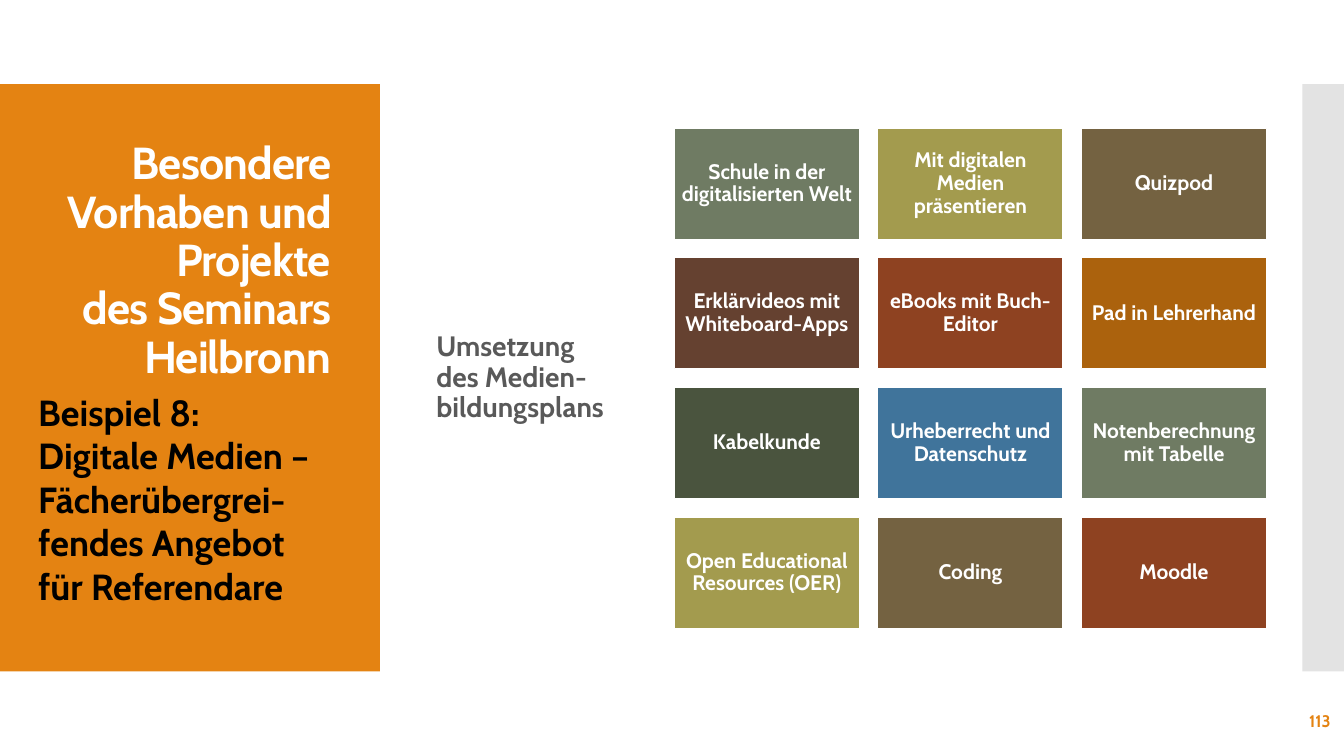
from dataclasses import dataclass

from pptx import Presentation
from pptx.dml.color import RGBColor
from pptx.enum.shapes import MSO_SHAPE
from pptx.enum.text import MSO_ANCHOR, PP_ALIGN
from pptx.shapes.autoshape import Shape
from pptx.slide import Slide
from pptx.util import Pt

RECTANGLE = MSO_SHAPE.RECTANGLE
TOP, MIDDLE, BOTTOM = MSO_ANCHOR.TOP, MSO_ANCHOR.MIDDLE, MSO_ANCHOR.BOTTOM
LEFT, CENTER, RIGHT = PP_ALIGN.LEFT, PP_ALIGN.CENTER, PP_ALIGN.RIGHT

FONT = "Cabin"
COLORS = {
    "white": "FFFFFF",
    "black": "000000",
    "gray": "595959",
    "light_gray": "E3E3E3",
    "orange": "E48312",
    "sage": "6F7B63",
    "olive": "A39B4E",
    "khaki": "746241",
    "brown": "654130",
    "rust": "8E4221",
    "amber": "AB620D",
    "forest": "4A543E",
    "blue": "40749B",
}

COLUMNS = 3
GRID_LEFT, GRID_TOP = 481.7, 91.6
TILE_WIDTH, TILE_HEIGHT = 132.2, 79.3
COLUMN_PITCH, ROW_PITCH = 145.4, 92.6
TILE_INSET = 4.3


@dataclass(frozen=True)
class Box:
    left: float
    top: float
    width: float
    height: float


@dataclass(frozen=True)
class TextStyle:
    size: float
    color: str
    align: PP_ALIGN
    anchor: MSO_ANCHOR
    line_spacing: float = 1.0
    tracking: int = 0


@dataclass(frozen=True)
class TextBlock:
    box: Box
    style: TextStyle
    paragraphs: tuple[tuple[str, ...], ...]


@dataclass(frozen=True)
class Topic:
    label: str
    color: str


PANELS = (
    (Box(0, 60, 271.4, 419.5), "orange"),
    (Box(930.2, 60, 29.8, 419.5), "light_gray"),
)

TEXT_BLOCKS = (
    TextBlock(
        Box(837.4, 500.4, 120.2, 28.8),
        TextStyle(12, "orange", RIGHT, MIDDLE),
        (("113",),),
    ),
    TextBlock(
        Box(20.2, 90, 223.2, 187.2),
        TextStyle(32, "white", RIGHT, BOTTOM, 0.9, -60),
        (("Besondere Vorhaben und Projekte",), ("des Seminars Heilbronn",)),
    ),
    TextBlock(
        Box(20.2, 275, 223.2, 182.9),
        TextStyle(25.9, "black", LEFT, TOP),
        (("Beispiel 8:",
          "Digitale Medien – Fächerübergrei-fendes Angebot für Referendare"),),
    ),
    TextBlock(
        Box(304.6, 68.4, 151.2, 403.2),
        TextStyle(20, "gray", LEFT, MIDDLE, 0.9),
        (("Umsetzung", "des Medien-bildungsplans"),),
    ),
)

TOPIC_STYLE = TextStyle(15, "white", CENTER, MIDDLE, 0.9)
TOPICS = (
    Topic("Schule in der digitalisierten Welt", "sage"),
    Topic("Mit digitalen Medien präsentieren", "olive"),
    Topic("Quizpod", "khaki"),
    Topic("Erklärvideos mit Whiteboard-Apps", "brown"),
    Topic("eBooks mit Buch-Editor", "rust"),
    Topic("Pad in Lehrerhand", "amber"),
    Topic("Kabelkunde", "forest"),
    Topic("Urheberrecht und Datenschutz", "blue"),
    Topic("Notenberechnung mit Tabelle", "sage"),
    Topic("Open Educational Resources (OER)", "olive"),
    Topic("Coding", "khaki"),
    Topic("Moodle", "rust"),
)


def rgb(color: str) -> RGBColor:
    return RGBColor.from_string(COLORS[color])


def write_text(
    shape: Shape, paragraphs: tuple[tuple[str, ...], ...], style: TextStyle
) -> None:
    frame = shape.text_frame
    frame.word_wrap = True
    frame.vertical_anchor = style.anchor
    for index, lines in enumerate(paragraphs):
        paragraph = frame.add_paragraph() if index else frame.paragraphs[0]
        paragraph.alignment = style.align
        paragraph.line_spacing = style.line_spacing
        for position, line in enumerate(lines):
            if position:
                paragraph.add_line_break()
            run = paragraph.add_run()
            run.text = line
            run.font.name = FONT
            run.font.size = Pt(style.size)
            run.font.bold = True
            run.font.color.rgb = rgb(style.color)
            if style.tracking:
                run._r.get_or_add_rPr().set("spc", str(style.tracking))


def add_panel(slide: Slide, box: Box, color: str) -> Shape:
    panel = slide.shapes.add_shape(
        RECTANGLE, Pt(box.left), Pt(box.top), Pt(box.width), Pt(box.height)
    )
    panel.shadow.inherit = False
    panel.fill.solid()
    panel.fill.fore_color.rgb = rgb(color)
    panel.line.fill.background()
    return panel


def add_text_block(slide: Slide, block: TextBlock) -> None:
    box = block.box
    text_box = slide.shapes.add_textbox(
        Pt(box.left), Pt(box.top), Pt(box.width), Pt(box.height)
    )
    write_text(text_box, block.paragraphs, block.style)


def add_topic(slide: Slide, topic: Topic, index: int) -> None:
    row, column = divmod(index, COLUMNS)
    box = Box(
        GRID_LEFT + column * COLUMN_PITCH,
        GRID_TOP + row * ROW_PITCH,
        TILE_WIDTH,
        TILE_HEIGHT,
    )
    tile = add_panel(slide, box, topic.color)
    tile.line.color.rgb = rgb("white")
    tile.line.width = Pt(0.85)
    frame = tile.text_frame
    frame.margin_left = frame.margin_right = Pt(TILE_INSET)
    frame.margin_top = frame.margin_bottom = Pt(TILE_INSET)
    write_text(tile, ((topic.label,),), TOPIC_STYLE)


def main() -> None:
    presentation = Presentation()
    presentation.slide_width = Pt(960)
    presentation.slide_height = Pt(540)
    slide = presentation.slides.add_slide(presentation.slide_layouts[6])
    for box, color in PANELS:
        add_panel(slide, box, color)
    for block in TEXT_BLOCKS:
        add_text_block(slide, block)
    for index, topic in enumerate(TOPICS):
        add_topic(slide, topic, index)
    presentation.save("out.pptx")


if __name__ == "__main__":
    main()
